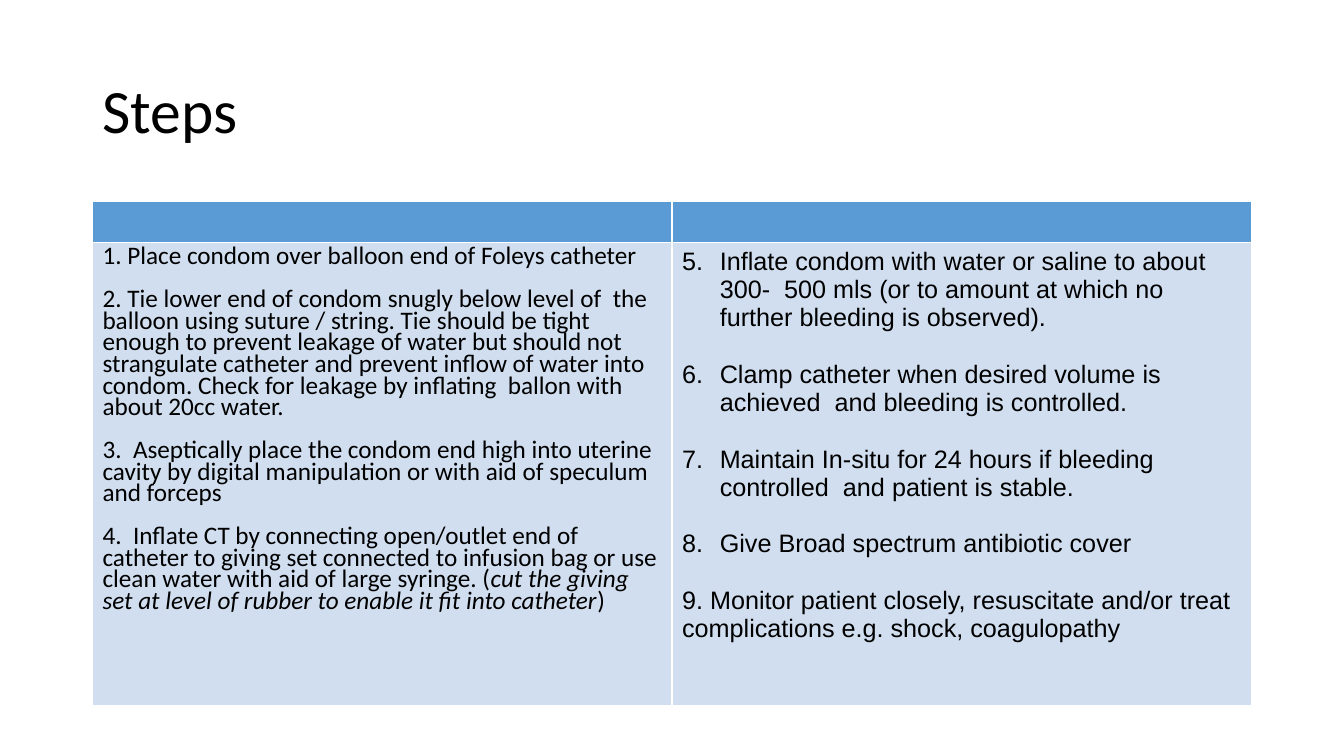
from dataclasses import dataclass

from lxml.etree import SubElement
from pptx import Presentation
from pptx.dml.color import RGBColor
from pptx.enum.text import MSO_ANCHOR, MSO_AUTO_SIZE, PP_ALIGN
from pptx.oxml.ns import qn
from pptx.util import Cm, Pt

LEFT, WIDTH = Cm(2.33), Cm(29.21)
HEADER_FILL, BODY_FILL, INK = "5B9BD5", "D0DEEF", "000000"
FIRST_AUTO_NUMBER = 5
NUMBER_INDENT = Cm(0.95)


@dataclass(frozen=True)
class Step:
    text: str
    numbered: bool = False
    aside: str = ""
    ending: str = ""


@dataclass(frozen=True)
class StepColumn:
    font: str
    line_spacing: float
    gap: float
    steps: tuple[Step, ...]


COLUMNS = (
    StepColumn("Calibri", 0.7, 15.4, (
        Step("1. Place condom over balloon end of Foleys catheter"),
        Step("2. Tie lower end of condom snugly below level of  the balloon using suture / string. "
             "Tie should be tight enough to prevent leakage of water but should not strangulate "
             "catheter and prevent inflow of water into condom. Check for leakage by inflating  "
             "ballon with about 20cc water."),
        Step("3.  Aseptically place the condom end high into uterine cavity by digital "
             "manipulation or with aid of speculum and forceps"),
        Step("4.  Inflate CT by connecting open/outlet end of catheter to giving set connected to "
             "infusion bag or use clean water with aid of large syringe. (",
             aside="cut the giving set at level of rubber to enable it fit into catheter",
             ending=")"),
    )),
    StepColumn("Arial", 1.0, 20.2, (
        Step("Inflate condom with water or saline to about 300-  500 mls (or to amount at which "
             "no further bleeding is observed).", numbered=True),
        Step("Clamp catheter when desired volume is achieved  and bleeding is controlled.",
             numbered=True),
        Step("Maintain In-situ for 24 hours if bleeding controlled  and patient is stable.",
             numbered=True),
        Step("Give Broad spectrum antibiotic cover", numbered=True),
        Step("9. Monitor patient closely, resuscitate and/or treat complications e.g. shock, "
             "coagulopathy"),
    )),
)


def color(value: str) -> RGBColor:
    return RGBColor.from_string(value)


def apply(target, values: dict) -> None:
    for attribute, value in values.items():
        setattr(target, attribute, value)


def add_run(paragraph, text: str, font: str, size: float, italic: bool = False) -> None:
    run = paragraph.add_run()
    run.text = text
    apply(run.font, {"name": font, "size": Pt(size), "bold": False, "italic": italic})
    run.font.color.rgb = color(INK)


def add_number(paragraph) -> None:
    properties = paragraph._p.get_or_add_pPr()
    properties.set("marL", str(NUMBER_INDENT))
    properties.set("indent", str(-NUMBER_INDENT))
    number_color = SubElement(properties, qn("a:buClr"))
    SubElement(number_color, qn("a:srgbClr"), val=INK)
    SubElement(properties, qn("a:buFont"), typeface="+mj-lt")
    SubElement(properties, qn("a:buAutoNum"), type="arabicPeriod",
               startAt=str(FIRST_AUTO_NUMBER))


def fill_cell(cell, value: str) -> None:
    cell.fill.solid()
    cell.fill.fore_color.rgb = color(value)


def write_steps(cell, column: StepColumn) -> None:
    frame = cell.text_frame
    for index, step in enumerate(column.steps):
        paragraph = frame.add_paragraph() if index else frame.paragraphs[0]
        if step.numbered:
            add_number(paragraph)
        apply(paragraph, {"line_spacing": column.line_spacing,
                          "space_before": Pt(column.gap if index else 0)})
        for text, italic in ((step.text, False), (step.aside, True), (step.ending, False)):
            if text:
                add_run(paragraph, text, column.font, 18, italic)


def add_title(slide) -> None:
    title = slide.shapes.title
    apply(title, {"left": LEFT, "top": Cm(1.01), "width": WIDTH, "height": Cm(3.68)})
    apply(title.text_frame, {"vertical_anchor": MSO_ANCHOR.MIDDLE, "word_wrap": True,
                             "auto_size": MSO_AUTO_SIZE.NONE})
    heading = title.text_frame.paragraphs[0]
    apply(heading, {"alignment": PP_ALIGN.LEFT, "line_spacing": 0.9})
    add_run(heading, "Steps", "Calibri", 44)


def add_steps_table(slide) -> None:
    row_heights = (Cm(1.03), Cm(11.68))
    table = slide.shapes.add_table(len(row_heights), len(COLUMNS), LEFT, Cm(5.08),
                                   WIDTH, sum(row_heights)).table
    table.horz_banding = False
    for row, height in zip(table.rows, row_heights):
        row.height = height
    for index, column in enumerate(COLUMNS):
        fill_cell(table.cell(0, index), HEADER_FILL)
        fill_cell(table.cell(1, index), BODY_FILL)
        write_steps(table.cell(1, index), column)


def main() -> None:
    deck = Presentation()
    apply(deck, {"slide_width": Cm(33.87), "slide_height": Cm(19.05)})
    slide = deck.slides.add_slide(deck.slide_layouts[5])
    add_title(slide)
    add_steps_table(slide)
    deck.save("out.pptx")


if __name__ == "__main__":
    main()
